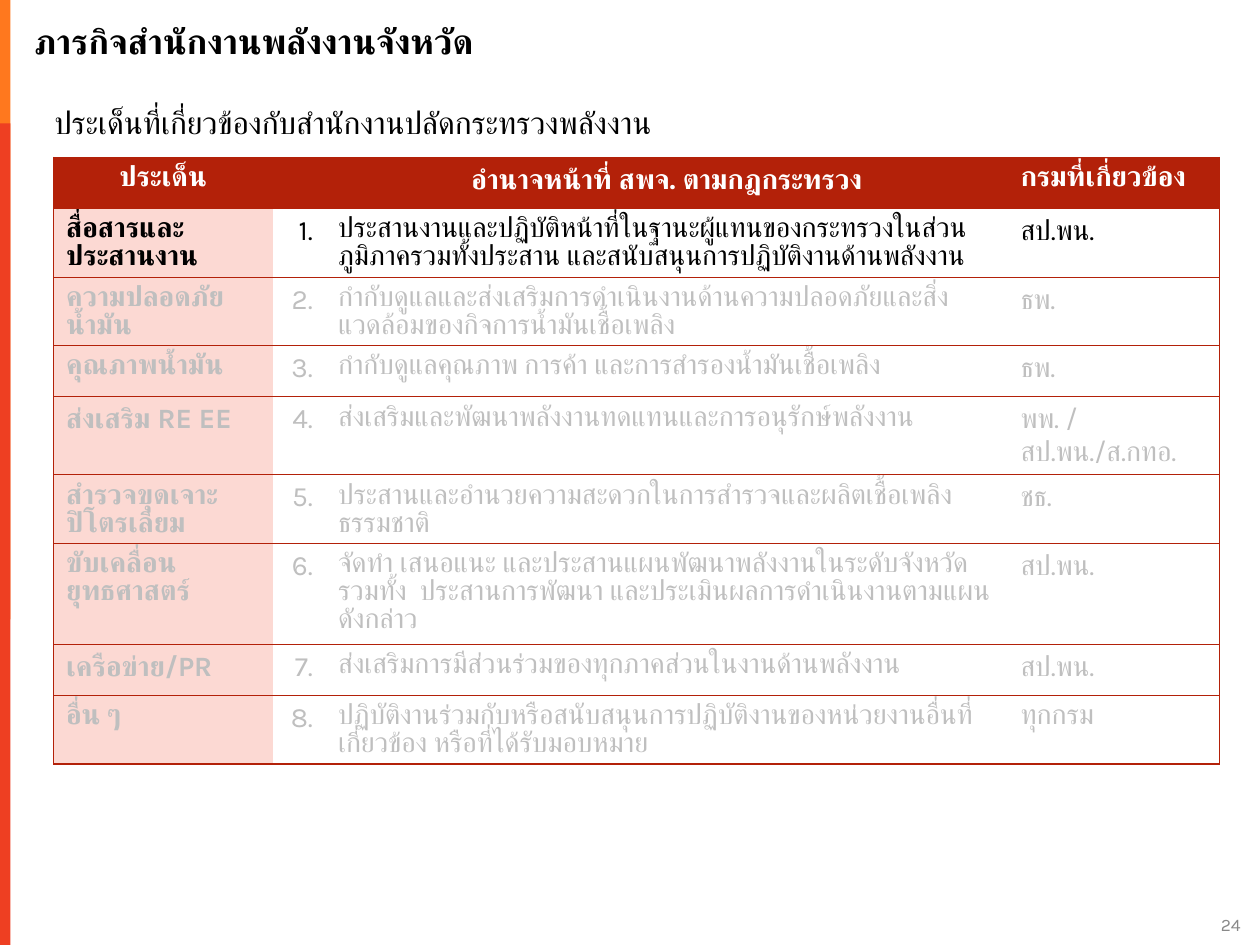
from lxml import etree
from pptx import Presentation
from pptx import util as u
from pptx.dml import color
from pptx.enum import shapes, text
from pptx.oxml import ns

FONT = "Karla"
RED, PINK, BLACK, GREY, WHITE = "B32109", "FCD9D3", "000000", "BFBFBF", "FFFFFF"
LEFT, CENTER, RIGHT = text.PP_ALIGN.LEFT, text.PP_ALIGN.CENTER, text.PP_ALIGN.RIGHT

TITLE = "ภารกิจสำนักงานพลังงานจังหวัด"
SUBTITLE = "ประเด็นที่เกี่ยวข้องกับสำนักงานปลัดกระทรวงพลังงาน"
PAGE_NUMBER = "24"
HEADER = ("ประเด็น", "", "อำนาจหน้าที่ สพจ. ตามกฎกระทรวง", "กรมที่เกี่ยวข้อง")
MISSIONS = [
    ("สื่อสารและประสานงาน",
     "ประสานงานและปฏิบัติหน้าที่ในฐานะผู้แทนของกระทรวงในส่วนภูมิภาครวมทั้งประสาน และสนับสนุนการปฏิบัติงานด้านพลังงาน",
     "สป.พน."),
    ("ความปลอดภัย\vน้ำมัน",
     "กํากับดูแลและส่งเสริมการดําเนินงานด้านความปลอดภัยและสิ่งแวดล้อมของกิจการน้ำมันเชื้อเพลิง",
     "ธพ."),
    ("คุณภาพน้ำมัน", "กํากับดูแลคุณภาพ การค้า และการสํารองน้ำมันเชื้อเพลิง", "ธพ."),
    ("ส่งเสริม RE EE", "ส่งเสริมและพัฒนาพลังงานทดแทนและการอนุรักษ์พลังงาน",
     "พพ. / สป.พน./ส.กทอ."),
    ("สำรวจขุดเจาะ\vปิโตรเลียม",
     "ประสานและอํานวยความสะดวกในการสํารวจและผลิตเชื้อเพลิงธรรมชาติ", "ชธ."),
    ("ขับเคลื่อนยุทธศาสตร์",
     "จัดทำ เสนอแนะ และประสานแผนพัฒนาพลังงานในระดับจังหวัด รวมทั้ง  ประสานการพัฒนา และประเมินผลการดําเนินงานตามแผนดังกล่าว",
     "สป.พน."),
    ("เครือข่าย/PR", "ส่งเสริมการมีส่วนร่วมของทุกภาคส่วนในงานด้านพลังงาน", "สป.พน."),
    ("อื่น ๆ",
     "ปฏิบัติงานร่วมกับหรือสนับสนุนการปฏิบัติงานของหน่วยงานอื่นที่เกี่ยวข้อง หรือที่ได้รับมอบหมาย",
     "ทุกกรม"),
]
COLUMN_WIDTHS = (125.2, 30.2, 390, 121)
ROW_HEIGHTS = (29.2, 39.2, 39.2, 29.2, 44.6, 39.2, 57.6, 29.2, 39.2)
SIDE_BARS = [(0, 354, "FF781E"), (70.5, 469.5, "EE3F22")]


def rgb(value):
    return color.RGBColor.from_string(value)


def write(frame, words, size, ink, bold=False, align=LEFT):
    para = frame.paragraphs[0]
    para.text = words
    para.alignment = align
    for span in para.runs:
        span.font.size = u.Pt(size)
        span.font.bold = bold
        span.font.name = FONT
        span.font.color.rgb = rgb(ink)
        complex_font = etree.SubElement(span.font._element, ns.qn("a:cs"))
        complex_font.set("typeface", FONT)
    return para


def place(box, left, top, width, height, anchor, wrap=True):
    box.left, box.top, box.width, box.height = map(u.Pt, (left, top, width, height))
    frame = box.text_frame
    frame.margin_left = frame.margin_top = frame.margin_right = frame.margin_bottom = 0
    frame.auto_size = text.MSO_AUTO_SIZE.NONE
    frame.word_wrap = wrap
    frame.vertical_anchor = anchor
    return frame


def border(cell, sides):
    properties = cell._tc.get_or_add_tcPr()
    for side in "LRTB":
        line = etree.SubElement(properties, ns.qn("a:ln" + side), w=str(u.Pt(0.75)))
        if side in sides:
            fill = etree.SubElement(line, ns.qn("a:solidFill"))
            etree.SubElement(fill, ns.qn("a:srgbClr"), val=RED)
        else:
            etree.SubElement(line, ns.qn("a:noFill"))


def tighten(cell, para):
    para.line_spacing = u.Pt(16)
    cell.margin_top, cell.margin_bottom = u.Pt(4.8), u.Pt(2)


def add_missions(page):
    rows = [HEADER] + [(topic, f"{number}.", duty, office)
                       for number, (topic, duty, office) in enumerate(MISSIONS, 1)]
    table = page.shapes.add_table(
        len(rows), len(HEADER), u.Pt(30.6), u.Pt(90),
        u.Pt(sum(COLUMN_WIDTHS)), u.Pt(sum(ROW_HEIGHTS))).table
    table.first_row = table.horz_banding = False
    for column, width in zip(table.columns, COLUMN_WIDTHS):
        column.width = u.Pt(width)
    for row, height in zip(table.rows, ROW_HEIGHTS):
        row.height = u.Pt(height)

    for r, row in enumerate(rows):
        ink = WHITE if r == 0 else BLACK if r == 1 else GREY
        aligns = (CENTER, LEFT, CENTER, LEFT) if r == 0 else (LEFT, RIGHT, LEFT, LEFT)
        for c, words in enumerate(row):
            cell = table.cell(r, c)
            border(cell, "TB" + {0: "L", len(row) - 1: "R"}.get(c, ""))
            if r == 0 or c == 0:
                cell.fill.solid()
                cell.fill.fore_color.rgb = rgb(RED if r == 0 else PINK)
            else:
                cell.fill.background()
            para = write(cell.text_frame, words, 16, ink, r == 0 or c == 0, aligns[c])
            has_latin = any("!" <= letter <= "~" for letter in words)
            if words and not has_latin:
                tighten(cell, para)


def main():
    deck = Presentation()
    deck.slide_width, deck.slide_height = u.Pt(720), u.Pt(540)
    page = deck.slides.add_slide(deck.slide_layouts[1])
    title, body = page.placeholders

    for top, height, tint in SIDE_BARS:
        bar = page.shapes.add_shape(shapes.MSO_SHAPE.RECTANGLE,
                                    0, u.Pt(top), u.Pt(6), u.Pt(height))
        bar.shadow.inherit = False
        bar.fill.solid()
        bar.fill.fore_color.rgb = rgb(tint)
        bar.line.fill.background()

    frame = place(title, 19.5, 3, 700.5, 40, text.MSO_ANCHOR.MIDDLE)
    write(frame, TITLE, 20, BLACK, bold=True)

    frame = place(body, 31, 54, 678, 44, text.MSO_ANCHOR.TOP)
    para = write(frame, SUBTITLE, 18, BLACK)
    para.line_spacing = 1.22
    para.space_before = u.Pt(0)
    properties = para._p.get_or_add_pPr()
    properties.set("marL", "0")
    properties.set("indent", "0")
    etree.SubElement(properties, ns.qn("a:buNone"))

    add_missions(page)

    number = page.shapes.add_textbox(0, 0, 0, 0)
    frame = place(number, 697, 523.5, 12, 11, text.MSO_ANCHOR.BOTTOM, wrap=False)
    write(frame, PAGE_NUMBER, 10, "898989", align=RIGHT)

    deck.save("out.pptx")


if __name__ == "__main__":
    main()
